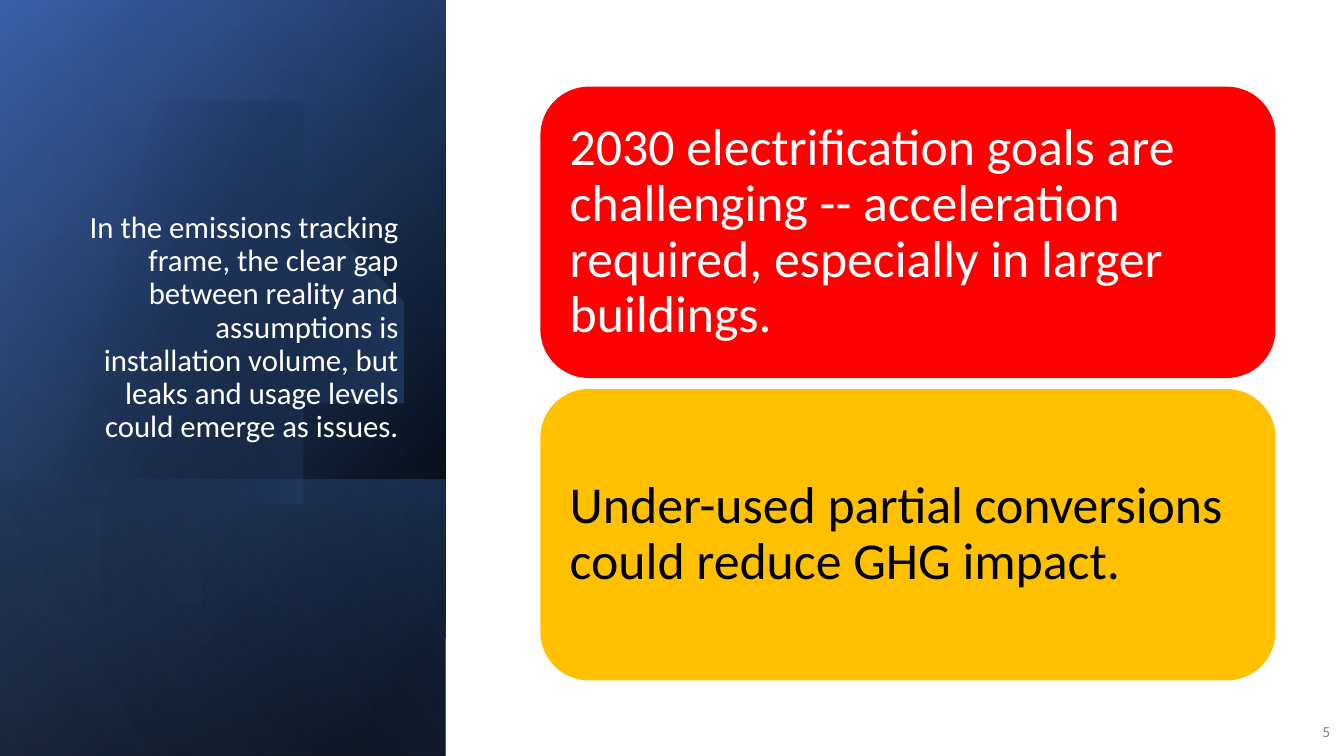
from lxml import etree
from pptx import Presentation
from pptx.dml.color import RGBColor
from pptx.enum.shapes import MSO_SHAPE
from pptx.enum.text import MSO_ANCHOR, PP_ALIGN
from pptx.oxml.ns import qn
from pptx.util import Inches, Pt

# Content
TITLE = ("In the emissions tracking frame, the clear gap between reality and assumptions is "
         "installation volume, but leaks and usage levels could emerge as issues.")
PAGE_NUMBER = "5"
COLORS = {"white": "FFFFFF", "black": "000000", "grey": "808080", "red": "FF0000",
          "amber": "FFC000", "navy": "2F5597", "blue": "4472C4", "light_blue": "8FAADC"}
CARDS = [
    ("2030 electrification goals are challenging -- acceleration required, "
     "especially in larger buildings.", "red", "white"),
    ("Under-used partial conversions could reduce GHG impact.", "amber", "black"),
]

# Side panel layers: top, height, gradient stops (position, color, opacity), angle
PANEL_WIDTH = 4.42
BASE_LAYERS = [
    (0, 7.5, [(8, "black", 100), (100, "navy", 100)], 50),
    (0, 7.5, [(0, "black", 0), (99, "blue", 46)], 30),
    (4.76, 2.74, [(2, "blue", 29), (100, "black", 30)], 130),
]
TOP_LAYER = (0, 7.5, [(0, "black", 0), (99, "light_blue", 11)], 120)
DISC_STOPS, DISC_ANGLE = [(29, "black", 0), (100, "blue", 43)], 14

# Disc outline: start point, then curves (three points) and straight lines (one point)
DISC_START = (1.49, 1.1)
DISC_SEGMENTS = [
    [(2.46, 1.12), (3.35, 1.77), (3.63, 2.75)],
    [(3.98, 3.97), (3.28, 5.23), (2.07, 5.58)],
    [(1.31, 5.8), (0.53, 5.61), (-0.03, 5.14)],
    [(-0.15, 5.03)],
    [(-0.15, 1.75)],
    [(0, 1.61)],
    [(0.23, 1.42), (0.5, 1.28), (0.8, 1.19)],
    [(1.03, 1.13), (1.26, 1.1), (1.49, 1.1)],
]
CURVE_STEPS = 16

CARD_LEFT, CARD_TOP, CARD_WIDTH, CARD_HEIGHT, CARD_PITCH = 5.36, 0.86, 7.29, 2.89, 3.0


def rgb(name):
    return RGBColor.from_string(COLORS[name])


def set_gradient(shape, stops, angle):
    shape.shadow.inherit = False
    shape.line.fill.background()
    shape.fill.gradient()
    gradient = shape._element.spPr.find(qn("a:gradFill"))
    for child in list(gradient):
        gradient.remove(child)
    gradient.set("rotWithShape", "1")
    stop_list = etree.SubElement(gradient, qn("a:gsLst"))
    for position, color, opacity in stops:
        stop = etree.SubElement(stop_list, qn("a:gs"), pos=str(position * 1000))
        fill_color = etree.SubElement(stop, qn("a:srgbClr"), val=COLORS[color])
        if opacity < 100:
            etree.SubElement(fill_color, qn("a:alpha"), val=str(opacity * 1000))
    etree.SubElement(gradient, qn("a:lin"), ang=str(angle * 60000), scaled="0")


def add_panel_layer(slide, top, height, stops, angle):
    # Turned a quarter and mirrored, so the frame has its sides swapped about the centre
    left = (PANEL_WIDTH - height) / 2
    frame_top = top + (height - PANEL_WIDTH) / 2
    shape = slide.shapes.add_shape(MSO_SHAPE.RECTANGLE, Inches(left), Inches(frame_top),
                                   Inches(height), Inches(PANEL_WIDTH))
    shape.rotation = 90
    shape._element.spPr.find(qn("a:xfrm")).set("flipH", "1")
    set_gradient(shape, stops, angle)


def disc_points():
    points, current = [], DISC_START
    for segment in DISC_SEGMENTS:
        if len(segment) == 1:
            points.append(segment[0])
        else:
            for step in range(1, CURVE_STEPS + 1):
                t = step / CURVE_STEPS
                weights = ((1 - t) ** 3, 3 * t * (1 - t) ** 2, 3 * t * t * (1 - t), t ** 3)
                corners = (current, *segment)
                points.append(tuple(sum(w * corner[axis] for w, corner in zip(weights, corners))
                                    for axis in (0, 1)))
        current = segment[-1]
    return points


def set_text(shape, text, size, color, alignment, anchor, line_spacing=None):
    frame = shape.text_frame
    frame.word_wrap = True
    frame.vertical_anchor = anchor
    frame.text = text
    paragraph = frame.paragraphs[0]
    paragraph.alignment = alignment
    if line_spacing:
        paragraph.line_spacing = line_spacing
    font = paragraph.runs[0].font
    font.name, font.size = "Calibri", Pt(size)
    font.color.rgb = rgb(color)


def add_card(slide, top, text, fill, color):
    card = slide.shapes.add_shape(MSO_SHAPE.ROUNDED_RECTANGLE, Inches(CARD_LEFT), Inches(top),
                                  Inches(CARD_WIDTH), Inches(CARD_HEIGHT))
    card.shadow.inherit = False
    card.fill.solid()
    card.fill.fore_color.rgb = rgb(fill)
    card.line.fill.background()
    set_text(card, text, 37, color, PP_ALIGN.LEFT, MSO_ANCHOR.MIDDLE, 0.9)
    frame = card.text_frame
    frame.margin_left = frame.margin_right = Inches(0.15)
    frame.margin_top = frame.margin_bottom = Inches(0.15)


def main():
    presentation = Presentation()
    presentation.slide_width, presentation.slide_height = Inches(13.33), Inches(7.5)
    slide = presentation.slides.add_slide(presentation.slide_layouts[6])

    # Side panel
    for layer in BASE_LAYERS:
        add_panel_layer(slide, *layer)
    builder = slide.shapes.build_freeform(*DISC_START, scale=Inches(1))
    builder.add_line_segments(disc_points(), close=True)
    set_gradient(builder.convert_to_shape(), DISC_STOPS, DISC_ANGLE)
    add_panel_layer(slide, *TOP_LAYER)

    # Title and page number
    title = slide.shapes.add_textbox(Inches(0.64), Inches(1.84), Inches(3.41), Inches(2.62))
    set_text(title, TITLE, 22, "white", PP_ALIGN.RIGHT, MSO_ANCHOR.BOTTOM, 0.9)
    number = slide.shapes.add_textbox(Inches(12.8), Inches(7.06), Inches(0.49), Inches(0.4))
    set_text(number, PAGE_NUMBER, 11, "grey", PP_ALIGN.RIGHT, MSO_ANCHOR.MIDDLE)

    # Cards
    for index, card in enumerate(CARDS):
        add_card(slide, CARD_TOP + index * CARD_PITCH, *card)

    presentation.save("out.pptx")


if __name__ == "__main__":
    main()
